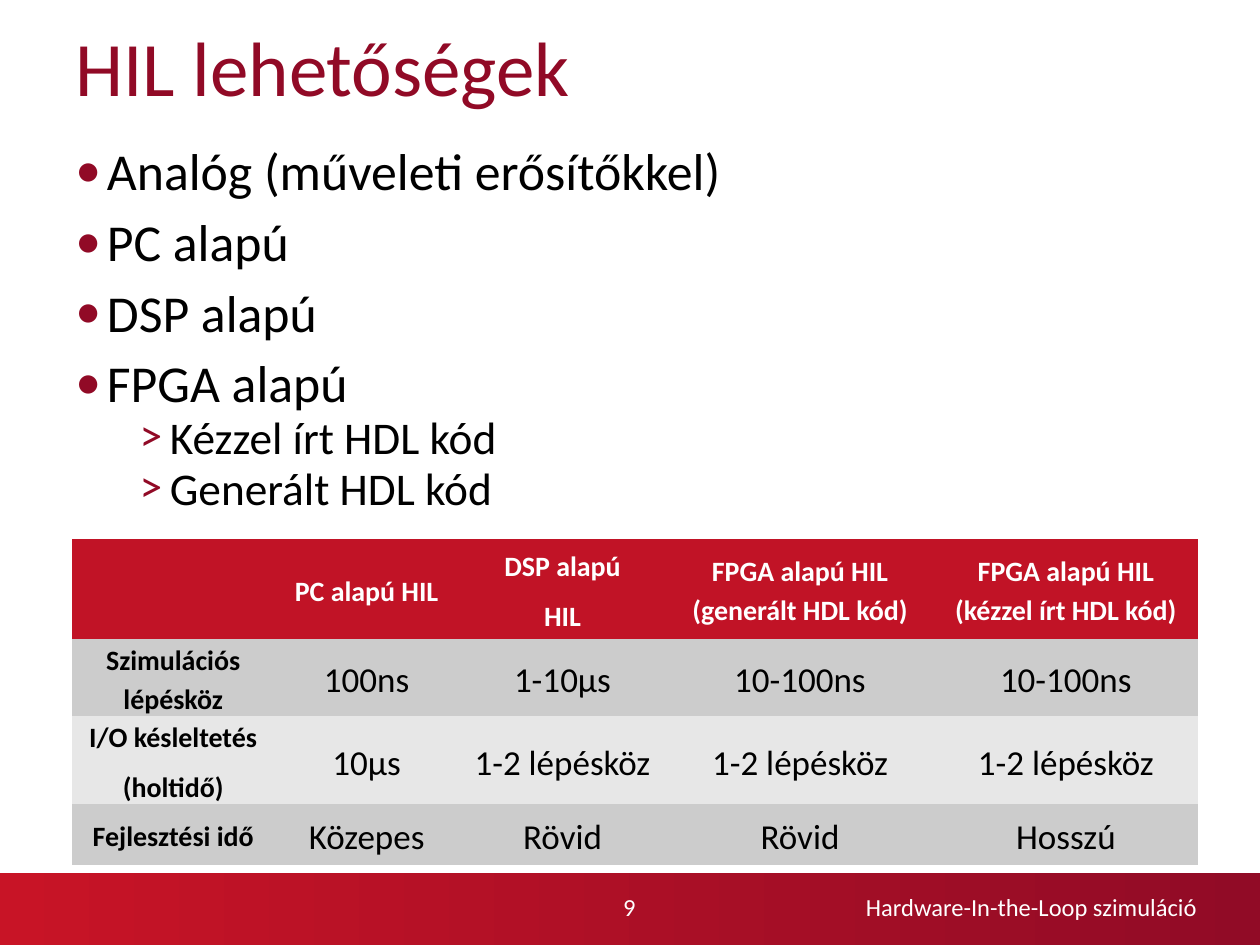
from dataclasses import dataclass

from lxml import etree
from pptx import Presentation
from pptx import util as u
from pptx.dml.color import RGBColor
from pptx.enum import shapes, text
from pptx.oxml.ns import qn

FONT = "Calibri"
COLORS = {
    "dark_red": "910A26",
    "bar_start": "C81426",
    "bar_end": "910B26",
    "header": "C11326",
    "band_dark": "CCCCCC",
    "band_light": "E7E7E7",
    "black": "000000",
    "white": "FFFFFF",
}
PLAIN_TABLE_STYLE = "{2D5ABB26-0587-4C30-8999-92F81FD0307C}"


@dataclass
class BulletStyle:
    char: str
    size: float
    left: float
    hanging: float
    space_before: float


@dataclass
class FooterText:
    content: str
    left: float
    width: float
    align: text.PP_ALIGN
    margin_left: float
    margin_right: float


MAIN = BulletStyle("•", 29.6, 0.25, 0.25, 12)
SUB = BulletStyle(">", 25.9, 0.75, 0.24, 4)
BULLETS = [
    (MAIN, "Analóg (műveleti erősítőkkel)"),
    (MAIN, "PC alapú"),
    (MAIN, "DSP alapú"),
    (MAIN, "FPGA alapú"),
    (SUB, "Kézzel írt HDL kód"),
    (SUB, "Generált HDL kód"),
]
FOOTERS = [
    FooterText("9", 4.7, 0.59, text.PP_ALIGN.CENTER, 0.04, 0.04),
    FooterText("Hardware-In-the-Loop szimuláció", 5.42, 4.08,
               text.PP_ALIGN.RIGHT, 0.1, 0),
]
# Each line break inside a cell starts a new paragraph
ROWS = [
    ["", "PC alapú HIL", "DSP alapú\nHIL",
     "FPGA alapú HIL (generált HDL kód)", "FPGA alapú HIL (kézzel írt HDL kód)"],
    ["Szimulációs lépésköz", "100ns", "1-10µs", "10-100ns", "10-100ns"],
    ["I/O késleltetés\n(holtidő)", "10µs"] + ["1-2 lépésköz"] * 3,
    ["Fejlesztési idő", "Közepes", "Rövid", "Rövid", "Hosszú"],
]
COL_WIDTHS = [1.61, 1.46, 1.65, 2.12, 2.1]
ROW_HEIGHTS = [0.79, 0.61, 0.69, 0.49]


def rgb(name: str) -> RGBColor:
    return RGBColor.from_string(COLORS[name])


def inches(*values: float) -> list:
    return [u.Inches(v) for v in values]


def add_run(p, content: str, size: float, color: str, bold: bool = False) -> None:
    r = p.add_run()
    r.text = content
    r.font.name = FONT
    r.font.size = u.Pt(size)
    r.font.bold = bold
    r.font.color.rgb = rgb(color)


def set_bullet(p, style: BulletStyle) -> None:
    pPr = p._p.get_or_add_pPr()
    pPr.set("marL", str(u.Inches(style.left)))
    pPr.set("indent", str(-u.Inches(style.hanging)))
    clr = etree.SubElement(pPr, qn("a:buClr"))
    etree.SubElement(clr, qn("a:srgbClr")).set("val", COLORS["dark_red"])
    etree.SubElement(pPr, qn("a:buFont")).set("typeface", FONT)
    etree.SubElement(pPr, qn("a:buChar")).set("char", style.char)


def add_bar(s) -> None:
    sp = s.shapes.add_shape(shapes.MSO_SHAPE.RECTANGLE, *inches(-0.01, 6.93, 10.01, 0.57))
    sp.shadow.inherit = False
    sp.line.fill.background()
    sp.fill.gradient()
    sp.fill.gradient_angle = 0
    for stop, color in zip(sp.fill.gradient_stops, ("bar_start", "bar_end")):
        stop.color.rgb = rgb(color)
    for stop, position in zip(sp.fill.gradient_stops, (0, 1)):
        stop.position = position


def format_title(s) -> None:
    title = s.shapes.title
    title.left, title.top, title.width, title.height = inches(0.5, 0.13, 9, 0.87)
    tf = title.text_frame
    tf.auto_size = text.MSO_AUTO_SIZE.NONE
    tf.vertical_anchor = text.MSO_ANCHOR.MIDDLE
    p = tf.paragraphs[0]
    p.alignment = text.PP_ALIGN.LEFT
    p.line_spacing = 0.9
    add_run(p, "HIL lehetőségek", 44, "dark_red")


def add_bullets(s) -> None:
    tf = s.shapes.add_textbox(*inches(0.5, 1.15, 9.31, 3.13)).text_frame
    tf.word_wrap = True
    for i, (style, content) in enumerate(BULLETS):
        p = tf.add_paragraph() if i else tf.paragraphs[0]
        set_bullet(p, style)
        p.level = int(style is SUB)
        p.line_spacing = 0.8
        p.space_before = u.Pt(style.space_before if i else 0)
        add_run(p, content, style.size, "black")


def add_footer(s, footer: FooterText) -> None:
    tf = s.shapes.add_textbox(*inches(footer.left, 7.03, footer.width, 0.34)).text_frame
    tf.word_wrap = True
    tf.vertical_anchor = text.MSO_ANCHOR.MIDDLE
    tf.margin_left, tf.margin_right = inches(footer.margin_left, footer.margin_right)
    p = tf.paragraphs[0]
    p.alignment = footer.align
    add_run(p, footer.content, 14, "white")


def fill_cell(cell, content: str, row: int, col: int) -> None:
    cell.fill.solid()
    band = "band_dark" if row % 2 else "band_light"
    cell.fill.fore_color.rgb = rgb(band if row else "header")
    cell.vertical_anchor = text.MSO_ANCHOR.MIDDLE
    cell.margin_left = cell.margin_right = u.Inches(0.07)
    cell.margin_top = cell.margin_bottom = 0
    if not content:
        return
    label = row == 0 or col == 0
    tf = cell.text_frame
    for i, line in enumerate(content.split("\n")):
        p = tf.add_paragraph() if i else tf.paragraphs[0]
        p.alignment = text.PP_ALIGN.CENTER
        p.line_spacing = 1.15
        p.space_before = u.Pt(6 if i else 0)
        add_run(p, line, 16 if label else 20, "black" if row else "white", label)


def add_comparison_table(s) -> None:
    frame = s.shapes.add_table(len(ROWS), len(COL_WIDTHS), *inches(0.57, 4.28, 8.93, 2.59))
    table = frame.table
    table._tbl.tblPr.find(qn("a:tableStyleId")).text = PLAIN_TABLE_STYLE
    for column, width in zip(table.columns, COL_WIDTHS):
        column.width = u.Inches(width)
    for row, height in zip(table.rows, ROW_HEIGHTS):
        row.height = u.Inches(height)
    for i, row in enumerate(ROWS):
        for j, content in enumerate(row):
            fill_cell(table.cell(i, j), content, i, j)


def main() -> None:
    prs = Presentation()
    prs.slide_width, prs.slide_height = inches(10, 7.5)
    s = prs.slides.add_slide(prs.slide_layouts[5])  # title only

    # Title and bullet list
    add_bar(s)
    format_title(s)
    add_bullets(s)

    # Footer on the bar
    for footer in FOOTERS:
        add_footer(s, footer)

    # Comparison of the HIL options
    add_comparison_table(s)
    prs.save("out.pptx")


if __name__ == "__main__":
    main()
